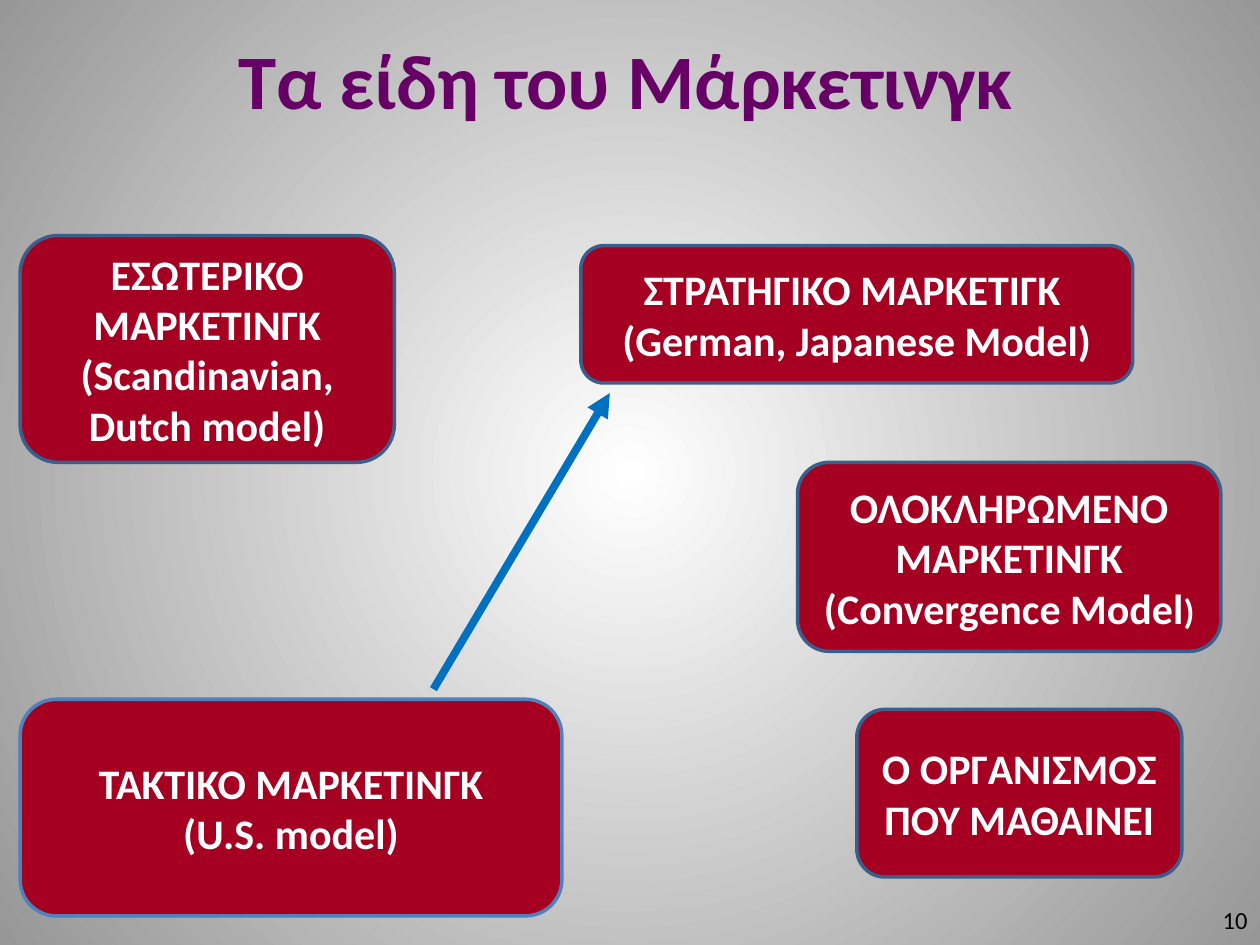
from pptx import Presentation
from pptx import util as u
from pptx.dml.color import RGBColor
from pptx.enum import shapes, text
from pptx.oxml import parse_xml
from pptx.oxml.ns import nsdecls, qn
from lxml import etree

WIDTH, HEIGHT = u.Inches(10), u.Inches(7.5)
COLORS = {"title": "660066", "number": "000000", "card": "A50021", "label": "FFFFFF",
          "edge": "3A5F8C", "light_edge": "4F81BD", "arrow": "0070C0",
          "center": "FFFFFF", "rim": "979797"}
ROUNDED = shapes.MSO_SHAPE.ROUNDED_RECTANGLE
ALTERNATE = shapes.MSO_SHAPE.FLOWCHART_ALTERNATE_PROCESS
CENTER, RIGHT = text.PP_ALIGN.CENTER, text.PP_ALIGN.RIGHT

# Box in percent of the slide (left, top, width, height), outline, edge colour,
# then paragraphs of (words, size) runs.
CARDS = [
    ((1.6, 24.93, 29.7, 24), ALTERNATE, "edge",
     [[("ΕΣΩΤΕΡΙΚΟ ΜΑΡΚΕΤΙΝΓΚ (Scandinavian, Dutch model)", 24)]]),
    ((63.3, 48.93, 33.6, 20), ROUNDED, "edge",
     [[("ΟΛΟΚΛΗΡΩΜΕΝΟ ΜΑΡΚΕΤΙΝΓΚ", 24)], [("(Convergence Model", 24), (")", 20)]]),
    ((1.6, 74, 43, 22.93), ROUNDED, "light_edge",
     [[("ΤΑΚΤΙΚΟ ΜΑΡΚΕΤΙΝΓΚ", 24)], [("(U.S. model)", 24)]]),
    ((68, 75.07, 25.8, 17.73), ROUNDED, "edge",
     [[("Ο ΟΡΓΑΝΙΣΜΟΣ ΠΟΥ ΜΑΘΑΙΝΕΙ", 24)]]),
    ((46.1, 26, 43.8, 14.53), ROUNDED, "edge",
     [[("ΣΤΡΑΤΗΓΙΚΟ ΜΑΡΚΕΤΙΓΚ ", 24)], [("(German, Japanese Model)", 24)]]),
]


def rgb(name):
    return RGBColor.from_string(COLORS[name])


def place(*shares):
    """Turn alternating x and y percentages into slide lengths."""
    return [round(share / 100 * (HEIGHT if index % 2 else WIDTH))
            for index, share in enumerate(shares)]


def write(shape, paragraphs, color, bold, align):
    frame = shape.text_frame
    frame.word_wrap = True
    frame.vertical_anchor = text.MSO_ANCHOR.MIDDLE
    for index, runs in enumerate(paragraphs):
        paragraph = frame.add_paragraph() if index else frame.paragraphs[0]
        paragraph.alignment = align
        for words, size in runs:
            run = paragraph.add_run()
            run.text = words
            run.font.color.rgb = rgb(color)
            font_format = {"name": "Calibri", "size": u.Pt(size), "bold": bold}
            for attribute, value in font_format.items():
                setattr(run.font, attribute, value)


def paint_background(slide):
    """Fill the slide with a gradient that spreads from its centre."""
    fill = slide.background.fill
    fill.gradient()
    for stop, name in zip(fill.gradient_stops, ("center", "rim")):
        stop.color.rgb = rgb(name)
    linear = slide.element.find(".//" + qn("a:lin"))
    linear.getparent().replace(linear, parse_xml(
        f'<a:path {nsdecls("a")} path="circle">'
        '<a:fillToRect l="50000" t="50000" r="50000" b="50000"/></a:path>'))


def add_label(slide, box, words, size, color, bold, align):
    label = slide.shapes.add_textbox(*place(*box))
    write(label, [[(words, size)]], color, bold, align)


def add_card(slide, box, outline, edge, paragraphs):
    card = slide.shapes.add_shape(outline, *place(*box))
    card.shadow.inherit = False
    card.fill.solid()
    card.fill.fore_color.rgb = rgb("card")
    card.line.color.rgb = rgb(edge)
    card.line.width = u.Pt(2)
    write(card, paragraphs, "label", True, CENTER)


def add_arrow(slide, ends):
    arrow = slide.shapes.add_connector(shapes.MSO_CONNECTOR.STRAIGHT, *place(*ends))
    arrow.line.color.rgb = rgb("arrow")
    arrow.line.width = u.Pt(4.5)
    etree.SubElement(arrow.line._get_or_add_ln(), qn("a:tailEnd"), type="triangle")
    etree.SubElement(arrow.element.spPr, qn("a:effectLst"))


def main():
    presentation = Presentation()
    presentation.slide_width, presentation.slide_height = WIDTH, HEIGHT
    slide = presentation.slides.add_slide(presentation.slide_layouts[6])
    paint_background(slide)
    add_label(slide, (4.7, 0, 90, 16.67), "Τα είδη του Μάρκετινγκ", 44, "title", True, CENTER)
    add_label(slide, (76.7, 94.67, 23.3, 5.33), "10", 14, "number", False, RIGHT)
    for card in CARDS:
        add_card(slide, *card)
    add_arrow(slide, (34.4, 72.93, 48.4, 41.6))
    presentation.save("out.pptx")


if __name__ == "__main__":
    main()
